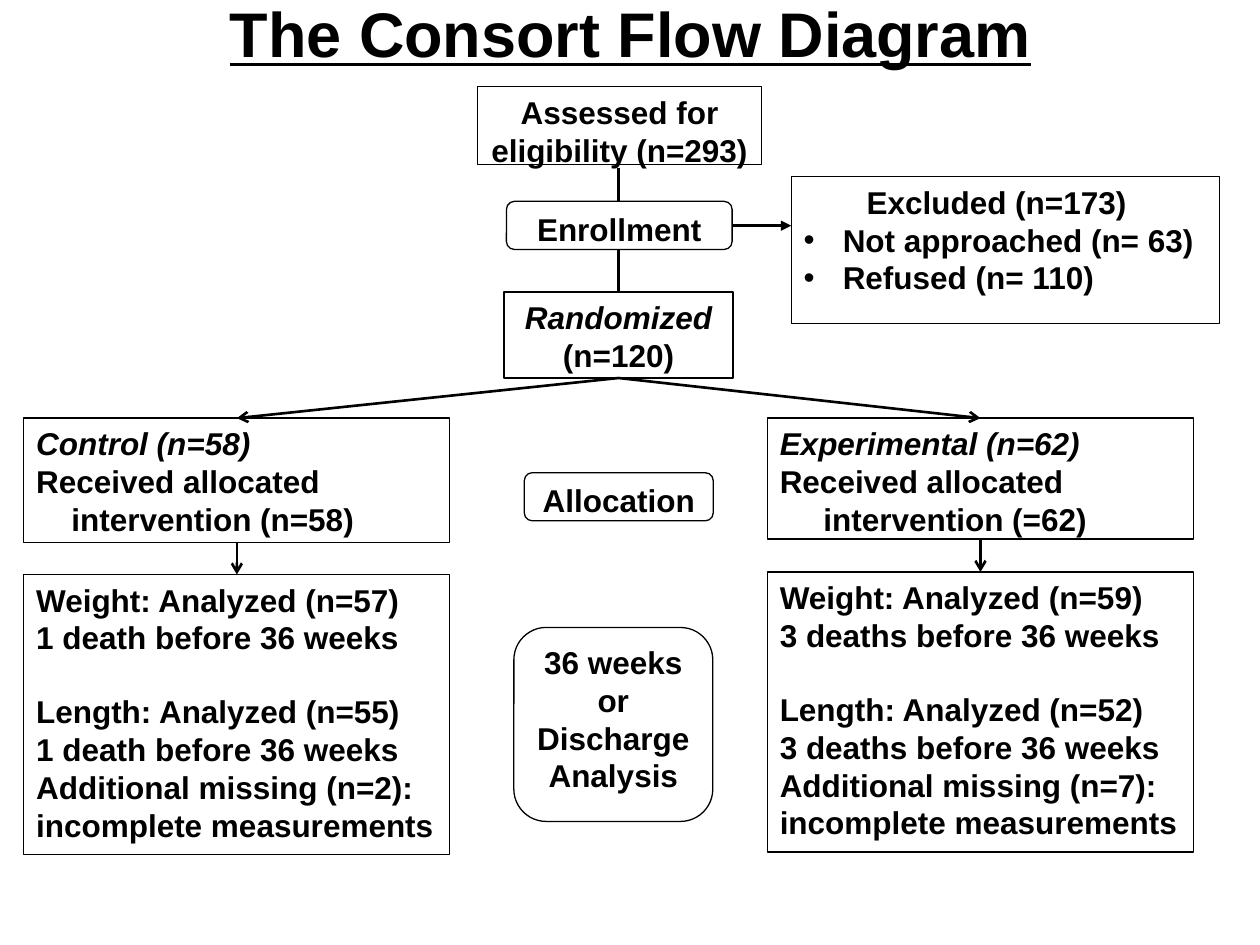
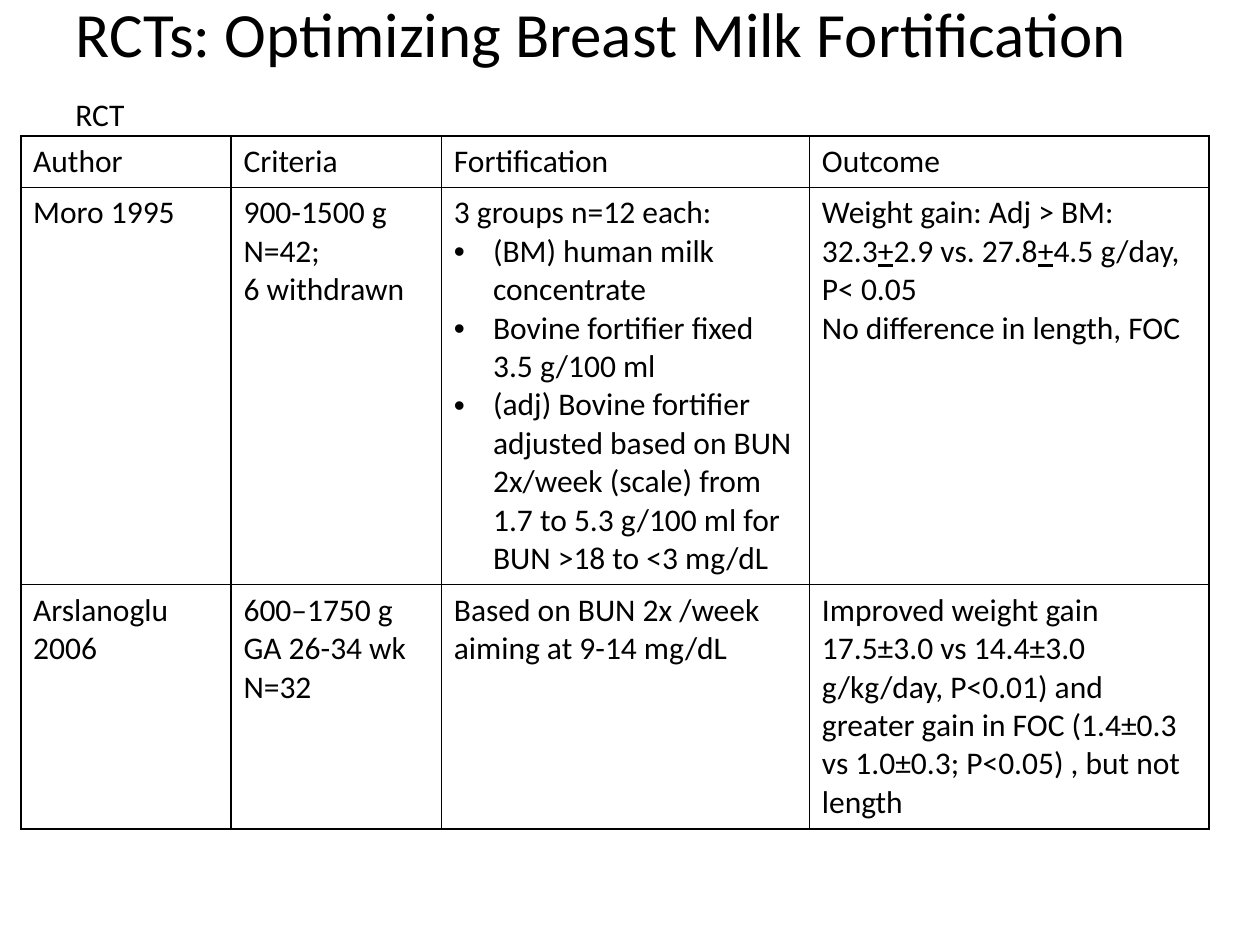
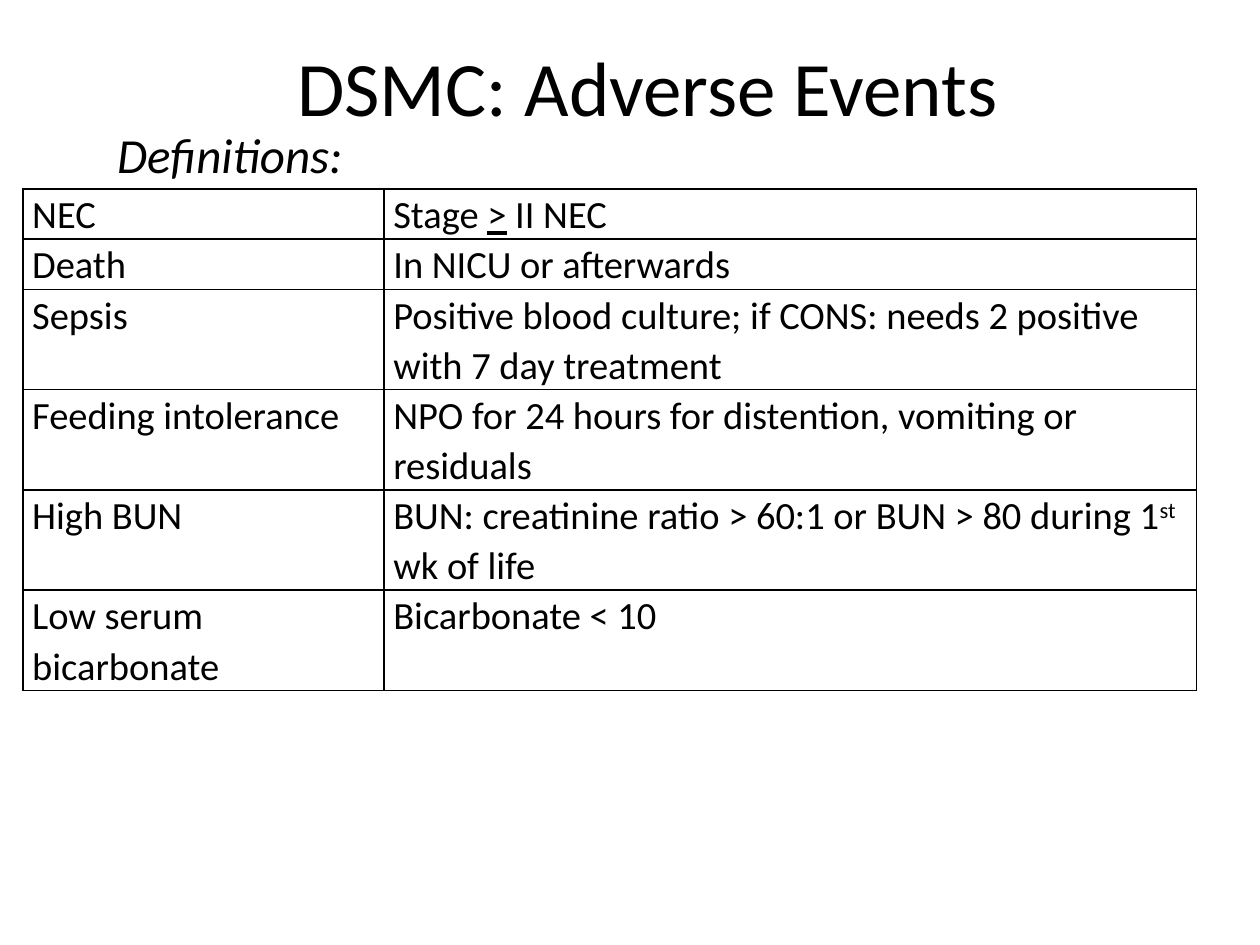
from dataclasses import dataclass

import lxml.etree
import pptx
import pptx.dml.color
import pptx.enum.shapes
import pptx.enum.text
import pptx.oxml.ns
import pptx.util

Cm = pptx.util.Cm
Pt = pptx.util.Pt
Kind = pptx.enum.shapes.MSO_SHAPE
Align = pptx.enum.text.PP_ALIGN
Anchor = pptx.enum.text.MSO_ANCHOR
AutoSize = pptx.enum.text.MSO_AUTO_SIZE


@dataclass(frozen=True)
class Theme:
    ink: str = "000000"
    paper: str = "FFFFFF"
    flow_font: str = "Arial"
    text_font: str = "Calibri"
    title: float = 36
    big_title: float = 44
    subtitle: float = 28
    definition: float = 22
    body: float = 18
    box_line: float = 0.75
    arrow_line: float = 1.5
    cell_line: float = 1
    bullet_indent: float = 0.79


@dataclass(frozen=True)
class Style:
    size: float
    font: str
    bold: bool = False
    italic: bool = False
    underline: bool = False
    spacing: float = 1.0


@dataclass(frozen=True)
class Run:
    text: str
    italic: bool = False
    underline: bool = False
    raised: bool = False


@dataclass(frozen=True)
class Para:
    runs: tuple
    align: object = Align.LEFT
    left: float = 0
    first: float = 0
    before: float = 0
    bullet: bool = False


def add_xml(parent, tag, **attributes):
    return lxml.etree.SubElement(parent, pptx.oxml.ns.qn(tag), attributes)


class Deck:
    def __init__(self, theme):
        self.theme = theme
        self.slide = None
        self.presentation = pptx.Presentation()
        self.presentation.slide_width = Cm(25.4)
        self.presentation.slide_height = Cm(19.05)

    def color(self, code):
        return pptx.dml.color.RGBColor.from_string(code)

    def bulleted(self, *runs):
        indent = self.theme.bullet_indent
        return Para(runs, left=indent, first=-indent, bullet=True)

    def new_slide(self):
        layout = self.presentation.slide_layouts[5]
        self.slide = self.presentation.slides.add_slide(layout)

    def fill_text(self, frame, paragraphs, style):
        """Fill a frame; a paragraph is a string, Run or Para, a run a string or Run."""
        for index, content in enumerate(paragraphs):
            para = content if isinstance(content, Para) else Para((content,))
            line = frame.add_paragraph() if index else frame.paragraphs[0]
            line.alignment = para.align
            line.line_spacing = style.spacing
            line.space_before = Pt(para.before)
            properties = line._p.get_or_add_pPr()
            properties.set("marL", str(Cm(para.left)))
            properties.set("indent", str(Cm(para.first)))
            if para.bullet:
                add_xml(properties, "a:buFont", typeface="Arial")
                add_xml(properties, "a:buChar", char="•")
            for part in para.runs:
                self.add_run(line, part if isinstance(part, Run) else Run(part), style)

    def add_run(self, line, part, style):
        run = line.add_run()
        run.text = part.text
        run.font.name = style.font
        run.font.size = Pt(style.size)
        run.font.bold = style.bold
        run.font.italic = style.italic or part.italic
        run.font.underline = style.underline or part.underline
        run.font.color.rgb = self.color(self.theme.ink)
        if part.raised:
            run._r.get_or_add_rPr().set("baseline", "30000")

    def title(self, text, place, style, align=Align.CENTER, wrap=True):
        heading = self.slide.shapes.title
        heading.left, heading.top, heading.width, heading.height = map(Cm, place)
        frame = heading.text_frame
        frame.word_wrap = wrap
        frame.auto_size = AutoSize.NONE
        frame.vertical_anchor = Anchor.MIDDLE
        self.fill_text(frame, [Para((text,), align)], style)

    def label(self, text, place, style):
        frame = self.slide.shapes.add_textbox(*map(Cm, place)).text_frame
        frame.word_wrap = False
        frame.auto_size = AutoSize.SHAPE_TO_FIT_TEXT
        self.fill_text(frame, [text], style)

    def box(self, paragraphs, place, style, kind=Kind.RECTANGLE):
        box = self.slide.shapes.add_shape(kind, *map(Cm, place))
        box.shadow.inherit = False
        box.fill.solid()
        box.fill.fore_color.rgb = self.color(self.theme.paper)
        box.line.color.rgb = self.color(self.theme.ink)
        box.line.width = Pt(self.theme.box_line)
        box.text_frame.word_wrap = True
        box.text_frame.vertical_anchor = Anchor.TOP
        self.fill_text(box.text_frame, paragraphs, style)
        return box

    def line(self, start=(0, 0), end=(0, 0), head=None):
        line = self.slide.shapes.add_connector(
            pptx.enum.shapes.MSO_CONNECTOR.STRAIGHT, *map(Cm, start + end))
        line.line.color.rgb = self.color(self.theme.ink)
        line.line.width = Pt(self.theme.arrow_line)
        properties = line._element.spPr
        if head:
            add_xml(properties.find(pptx.oxml.ns.qn("a:ln")), "a:tailEnd", type=head)
        add_xml(properties, "a:effectLst")
        return line

    def arrow_down(self, upper, lower):
        """Join the bottom of one box to the top of another."""
        arrow = self.line(head="arrow")
        arrow.begin_connect(upper, 2)
        arrow.end_connect(lower, 0)

    def table(self, rows, corner, widths, heights, style, margins):
        """Draw a plain ruled table; each cell is a list of paragraphs."""
        table = self.slide.shapes.add_table(
            len(rows), len(widths), *map(Cm, corner + (sum(widths), sum(heights)))).table
        table.first_row = table.horz_banding = False
        for column, width in zip(table.columns, widths):
            column.width = Cm(width)
        for row, height, contents in zip(table.rows, heights, rows):
            row.height = Cm(height)
            for cell, paragraphs in zip(row.cells, contents):
                side, top = map(Cm, margins)
                cell.margin_left = cell.margin_right = side
                cell.margin_top = cell.margin_bottom = top
                self.fill_text(cell.text_frame, paragraphs, style)
                self.rule(cell)
                cell.fill.background()

    def rule(self, cell):
        properties = cell._tc.get_or_add_tcPr()
        for side in ("a:lnL", "a:lnR", "a:lnT", "a:lnB"):
            border = add_xml(properties, side, w=str(Pt(self.theme.cell_line)))
            add_xml(add_xml(border, "a:solidFill"), "a:srgbClr", val=self.theme.ink)


def consort_slide(deck):
    theme = deck.theme
    flow = Style(theme.body, theme.flow_font, bold=True)
    deck.new_slide()
    deck.title("The Consort Flow Diagram", (4.29, -0.25, 16.84, 1.8),
               Style(theme.title, theme.flow_font, bold=True, underline=True), wrap=False)

    deck.line((12.47, 3.38), (12.47, 7.54))

    def centered(place, *runs, kind=Kind.RECTANGLE):
        return deck.box([Para(runs, Align.CENTER)], place, flow, kind)

    centered((9.63, 1.75, 5.72, 1.57), "Assessed for eligibility (n=293)")
    randomized = centered((10.16, 5.89, 4.62, 1.73),
                          Run("Randomized", italic=True), " (n=120)")
    for stage, place in (
            ("Enrollment", (10.21, 4.06, 4.55, 0.97)),
            ("Allocation", (10.57, 9.53, 3.81, 0.97)),
            ("36 weeks or Discharge Analysis", (10.36, 12.65, 4.01, 3.91))):
        centered(place, stage, kind=Kind.ROUNDED_RECTANGLE)

    deck.box([Para(("Excluded (n=173)",), first=1.27),
              deck.bulleted("Not approached (n= 63)"),
              deck.bulleted("Refused (n= 110)")],
             (15.95, 3.56, 8.64, 2.97), flow)
    deck.line((14.76, 4.55), (15.95, 4.55), "triangle")

    arm_width, allocation_top, one_line = 8.59, 8.43, 20.7
    arms = (
        (0.48, 2.51, 11.58, "Control (n=58)", "intervention (n=58)", 0.71,
         "1 death", 57, 55, 2),
        (15.47, 2.44, 11.53, "Experimental (n=62)", "intervention (=62)", 0.88,
         "3 deaths", 59, 52, 7),
    )
    for (left, height, analysis_top, group, received, indent,
         deaths, weighed, measured, missing) in arms:
        allocated = deck.box(
            [Run(group, italic=True), "Received allocated", Para((received,), left=indent)],
            (left, allocation_top, arm_width, height), flow)
        analyzed = deck.box(
            [f"Weight: Analyzed (n={weighed})",
             f"{deaths} before 36 weeks",
             Para((f"Length: Analyzed (n={measured})",), before=one_line),
             f"{deaths} before 36 weeks",
             f"Additional missing (n={missing}): incomplete measurements"],
            (left, analysis_top, arm_width, 5.65), flow)
        deck.arrow_down(randomized, allocated)
        deck.arrow_down(allocated, analyzed)


def fortification_slide(deck):
    theme = deck.theme
    body = Style(theme.body, theme.text_font)
    plus = Run("+", underline=True)
    deck.new_slide()
    deck.title("RCTs: Optimizing Breast Milk Fortification", (1.27, -0.84, 22.86, 3.18),
               Style(theme.title, theme.text_font, spacing=0.9), Align.LEFT)
    trials = [
        [["Author"], ["Criteria"], ["Fortification"], ["Outcome"]],
        [["Moro 1995"],
         ["900-1500 g", "N=42;", "6 withdrawn"],
         ["3 groups n=12 each:",
          deck.bulleted("(BM) human milk concentrate"),
          deck.bulleted("Bovine fortifier fixed 3.5 g/100 ml"),
          deck.bulleted("(adj) Bovine fortifier adjusted based on BUN 2x/week (scale) "
                        "from 1.7 to 5.3 g/100 ml for BUN >18 to <3 mg/dL")],
         [Para(("Weight gain: Adj > BM: 32.3", plus, "2.9 vs. 27.8", plus,
                "4.5 g/day, P< 0.05")),
          "No difference in length, FOC"]],
        [["Arslanoglu 2006"],
         ["600–1750 g GA 26-34 wk", "N=32"],
         ["Based on BUN 2x /week aiming at 9-14 mg/dL"],
         ["Improved weight gain 17.5±3.0 vs 14.4±3.0 g/kg/day, P<0.01) and greater "
          "gain in FOC (1.4±0.3 vs 1.0±0.3; P<0.05) , but not length"]],
    ]
    deck.table(trials, (0.42, 2.74), (4.24, 4.24, 7.42, 8.05), (1.03, 8, 4.92),
               body, (0.25, 0.13))
    deck.label("RCT", (1.27, 1.8, 1.52, 1.02), body)


def adverse_events_slide(deck):
    theme = deck.theme
    deck.new_slide()
    deck.title("DSMC: Adverse Events", (2.11, 0, 21.89, 3.68),
               Style(theme.big_title, theme.text_font, spacing=0.9))
    definitions = (
        ("NEC", ("Stage ", Run(">", underline=True), " II NEC")),
        ("Death", ("In NICU or afterwards",)),
        ("Sepsis", ("Positive blood culture; if CONS: needs 2 positive "
                    "with 7 day treatment",)),
        ("Feeding intolerance", ("NPO for 24 hours for distention, vomiting or residuals",)),
        ("High BUN", ("BUN: creatinine ratio > 60:1 or BUN > 80 during 1",
                      Run("st ", raised=True), "wk of life")),
        ("Low serum bicarbonate", ("Bicarbonate < 10",)),
    )
    row = 1.01
    deck.table([[[event], [Para(meaning)]] for event, meaning in definitions],
               (0.46, 3.81), (7.28, 16.38), [row] * 2 + [2 * row] * 4,
               Style(theme.definition, theme.text_font, spacing=1.07), (0.19, 0))
    deck.label("Definitions:", (2.11, 2.39, 5.11, 1.45),
               Style(theme.subtitle, theme.text_font, italic=True))


def main():
    deck = Deck(Theme())
    consort_slide(deck)
    fortification_slide(deck)
    adverse_events_slide(deck)
    deck.presentation.save("out.pptx")


if __name__ == "__main__":
    main()
